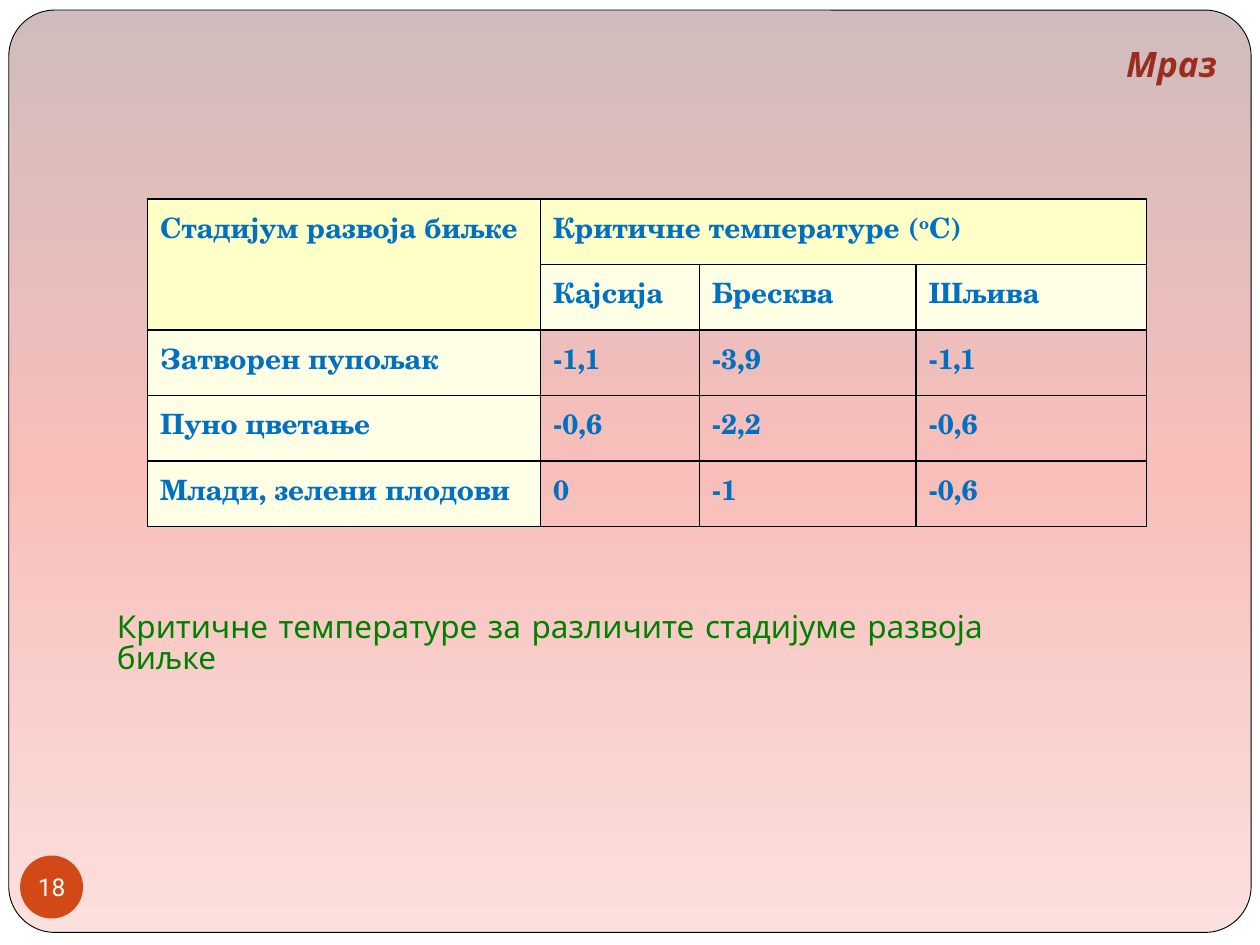
import dataclasses

import lxml.etree
import pptx
import pptx.dml.color
import pptx.enum.shapes
import pptx.enum.text
import pptx.oxml
import pptx.oxml.ns
import pptx.util

Inches = pptx.util.Inches
Align = pptx.enum.text.PP_ALIGN
Anchor = pptx.enum.text.MSO_ANCHOR
Shape = pptx.enum.shapes.MSO_SHAPE
qn = pptx.oxml.ns.qn


@dataclasses.dataclass(frozen=True)
class Theme:
    text_font: str = "Comic Neue"
    table_font: str = "TeX Gyre Schola"
    number_font: str = "Roboto"
    title_size: int = 20
    caption_size: int = 18
    table_size: int = 16
    number_size: int = 14
    title: str = "9B2D1F"
    caption: str = "008000"
    table: str = "0070C0"
    header: str = "FFFFC8"
    label: str = "FFFFE6"
    badge: str = "D34817"
    white: str = "FFFFFF"
    black: str = "000000"
    panel: tuple = ((0, "D0BCBC"), (50, "F8BFBA"), (100, "FBE0DE"))


def color(value):
    return pptx.dml.color.RGBColor.from_string(value)


def write(frame, text, *, font, size, fill, bold=False, italic=False,
          align=Align.LEFT, anchor=Anchor.TOP, line_spacing=None):
    """Fill a text frame; text between ^ marks is superscript."""
    frame.vertical_anchor = anchor
    para = frame.paragraphs[0]
    para.alignment = align
    para.line_spacing = line_spacing
    for index, part in enumerate(text.split("^")):
        span = para.add_run()
        span.text = part
        span.font.name = font
        span.font.size = pptx.util.Pt(size)
        span.font.bold = bold
        span.font.italic = italic
        span.font.color.rgb = color(fill)
        if index % 2:
            span._r.get_or_add_rPr().set("baseline", "30000")


class SlideBuilder:
    def __init__(self, deck, theme):
        self.theme = theme
        self.slide = deck.slides.add_slide(deck.slide_layouts[5])
        background = self.slide.background.fill
        background.solid()
        background.fore_color.rgb = color(theme.white)

    def panel(self, left, top, width, height):
        box = self.slide.shapes.add_shape(
            Shape.ROUNDED_RECTANGLE, left, top, width, height)
        box.shadow.inherit = False
        box.adjustments[0] = 0.05
        box.line.color.rgb = color(self.theme.black)
        box.line.width = pptx.util.Pt(0.5)
        box.fill.gradient()
        gradient = box._element.spPr.find(qn("a:gradFill"))
        stops = gradient.find(qn("a:gsLst"))
        for stop in list(stops):
            stops.remove(stop)
        for position, value in self.theme.panel:
            stop = lxml.etree.SubElement(stops, qn("a:gs"), pos=str(position * 1000))
            lxml.etree.SubElement(stop, qn("a:srgbClr"), val=value)
        gradient.find(qn("a:lin")).set("ang", str(90 * 60000))
        # Keep the panel behind the title placeholder
        self.slide.shapes._spTree.insert(2, box._element)

    def title(self, text, left, top, width, height):
        box = self.slide.shapes.title
        box.left, box.top, box.width, box.height = left, top, width, height
        box.text_frame.auto_size = pptx.enum.text.MSO_AUTO_SIZE.NONE
        write(box.text_frame, text, font=self.theme.text_font,
              size=self.theme.title_size, fill=self.theme.title,
              bold=True, italic=True, align=Align.RIGHT)

    def caption(self, text, left, top, width, height):
        box = self.slide.shapes.add_textbox(left, top, width, height)
        box.text_frame.word_wrap = True
        write(box.text_frame, text, font=self.theme.text_font,
              size=self.theme.caption_size, fill=self.theme.caption,
              line_spacing=0.8)

    def badge(self, text, left, top, size):
        box = self.slide.shapes.add_shape(Shape.OVAL, left, top, size, size)
        box.shadow.inherit = False
        box.fill.solid()
        box.fill.fore_color.rgb = color(self.theme.badge)
        box.line.fill.background()
        frame = box.text_frame
        frame.word_wrap = False
        frame.margin_left = frame.margin_right = 0
        frame.margin_top = frame.margin_bottom = 0
        write(frame, text, font=self.theme.number_font,
              size=self.theme.number_size, fill=self.theme.white,
              align=Align.CENTER, anchor=Anchor.MIDDLE)

    def border(self, cell):
        properties = cell._tc.get_or_add_tcPr()
        for index, side in enumerate(("lnL", "lnR", "lnT", "lnB")):
            line = lxml.etree.Element(qn(f"a:{side}"), w=str(pptx.util.Pt(1)))
            fill = lxml.etree.SubElement(line, qn("a:solidFill"))
            lxml.etree.SubElement(fill, qn("a:srgbClr"), val=self.theme.black)
            properties.insert(index, line)

    def table(self, rows, merges, left, top, widths, row_height):
        grid = self.slide.shapes.add_table(
            len(rows), len(widths), left, top,
            sum(widths), row_height * len(rows)).table
        grid.first_row = grid.horz_banding = False
        for column, width in zip(grid.columns, widths):
            column.width = width
        for row in grid.rows:
            row.height = row_height
        for first, last in merges:
            grid.cell(*first).merge(grid.cell(*last))
        for r, texts in enumerate(rows):
            for c, text in enumerate(texts):
                cell = grid.cell(r, c)
                if r == 0 or r == 1 and c == 0:
                    fill = self.theme.header
                else:
                    fill = self.theme.label if r == 1 or c == 0 else None
                if fill:
                    cell.fill.solid()
                    cell.fill.fore_color.rgb = color(fill)
                else:
                    cell.fill.background()
                self.border(cell)
                if text:
                    write(cell.text_frame, text, font=self.theme.table_font,
                          size=self.theme.table_size, fill=self.theme.table,
                          bold=True, align=Align.JUSTIFY)


def main():
    deck = pptx.Presentation()
    deck.slide_width, deck.slide_height = Inches(10), Inches(7.5)
    page = SlideBuilder(deck, Theme())

    # Background panel and title
    page.panel(Inches(0.07), Inches(0.08), Inches(9.86), Inches(7.32))
    page.title("Мраз", Inches(0.51), Inches(0.29), Inches(9.25), Inches(0.33))

    # Critical temperatures by growth stage and fruit
    rows = [
        ("Стадијум развоја биљке", "Критичне температуре (^о^C)".replace("о^C", "o^C"), "", ""),
        ("", "Кајсија", "Бресква", "Шљива"),
        ("Затворен пупољак", "-1,1", "-3,9", "-1,1"),
        ("Пуно цветање", "-0,6", "-2,2", "-0,6"),
        ("Млади, зелени плодови", "0", "-1", "-0,6"),
    ]
    merges = [((0, 0), (1, 0)), ((0, 1), (0, 3))]
    widths = [Inches(width) for width in (3.12, 1.26, 1.72, 1.83)]
    page.table(rows, merges, Inches(1.17), Inches(1.58), widths, Inches(0.52))

    # Caption and page number
    page.caption("Критичне температуре за различите стадијуме развоја биљке",
                 Inches(0.83), Inches(4.83), Inches(7.72), Inches(0.35))
    page.badge("18", Inches(0.16), Inches(6.79), Inches(0.5))

    deck.save("out.pptx")


if __name__ == "__main__":
    main()
